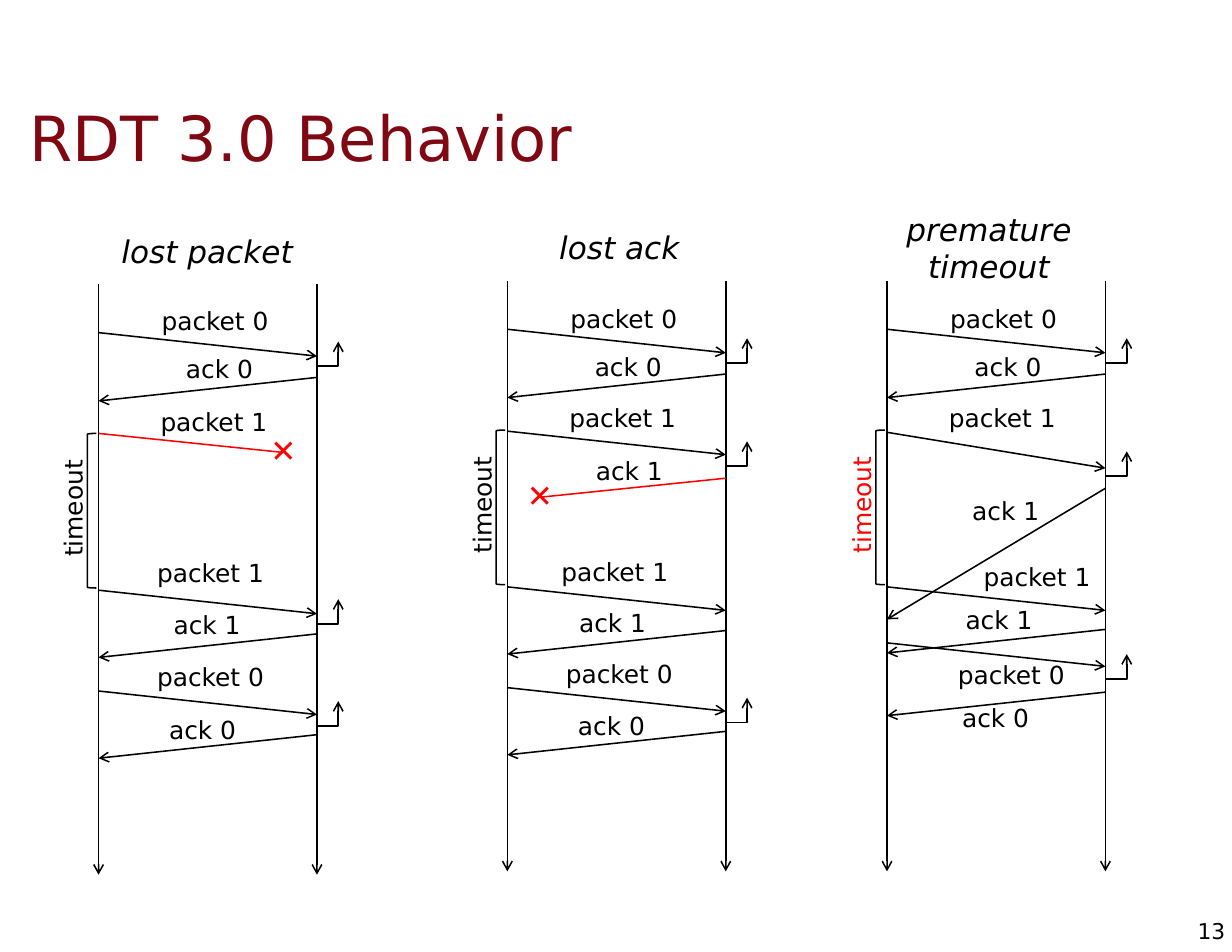
from dataclasses import dataclass

from lxml import etree
from pptx import Presentation
from pptx.dml.color import RGBColor
from pptx.enum.shapes import MSO_CONNECTOR as Connector, MSO_SHAPE as Preset
from pptx.enum.text import MSO_ANCHOR as Anchor, PP_ALIGN as Align
from pptx.oxml.ns import qn
from pptx.util import Inches, Pt

COLORS = {"title": "7F0813", "ink": "000000", "alert": "FF0000"}
LANE_WIDTH, LANE_HEIGHT = 1.95, 5.27
DROP = 0.21


@dataclass
class Message:
    """One packet or ack, with offsets in inches from the top left of its lane."""

    text: str
    y: float
    label_x: float
    label_y: float
    drop: float = DROP
    reach: float = LANE_WIDTH

    @property
    def lost(self):
        """Tell whether the message stops before the other side."""
        return self.reach < LANE_WIDTH


LANES = [
    {
        "title": "lost packet", "title_x": 0.97, "box": (0.88, 2.54),
        "timeout": "ink", "hooks": [0.73, 3.03, 3.94],
        "messages": [
            Message("packet 0", 0.43, 1.04, 0.32),
            Message("ack 0", 0.83, 1.08, 0.75),
            Message("packet 1", 1.33, 1.03, 1.22, drop=0.17, reach=1.65),
            Message("packet 1", 2.73, 1.0, 2.57),
            Message("ack 1", 3.12, 0.97, 3.04),
            Message("packet 0", 3.63, 1.0, 3.5),
            Message("ack 0", 4.02, 0.93, 3.97),
        ],
    },
    {
        "title": "lost ack", "title_x": 1.0, "box": (4.53, 2.51),
        "timeout": "ink", "hooks": [0.73, 1.65, 3.94],
        "messages": [
            Message("packet 0", 0.43, 1.04, 0.33),
            Message("ack 0", 0.83, 1.08, 0.76),
            Message("packet 1", 1.34, 1.03, 1.22),
            Message("ack 1", 1.76, 1.09, 1.69, drop=0.17, reach=1.66),
            Message("packet 1", 2.73, 0.96, 2.59),
            Message("ack 1", 3.12, 0.94, 3.05),
            Message("packet 0", 3.63, 1.0, 3.5),
            Message("ack 0", 4.02, 0.93, 3.97),
        ],
    },
    {
        "title": "premature\ntimeout", "title_x": 0.91, "box": (7.92, 2.51),
        "timeout": "alert", "hooks": [0.73, 1.74, 3.55],
        "messages": [
            Message("packet 0", 0.43, 1.04, 0.33),
            Message("ack 0", 0.83, 1.08, 0.76),
            Message("packet 1", 1.35, 1.03, 1.22, drop=0.32),
            Message("ack 1", 1.85, 1.06, 2.05, drop=1.17),
            Message("packet 1", 2.73, 1.34, 2.64),
            Message("ack 1", 3.11, 1.0, 3.02),
            Message("packet 0", 3.23, 1.11, 3.51),
            Message("ack 0", 3.67, 0.97, 3.9),
        ],
    },
]


def add_text(shapes, text, box, size=16, color="ink", font="DejaVu Sans",
             align=Align.CENTER, italic=False, rotation=0, insets=(0, 0)):
    """Place a formatted text box whose box is left, top, width, height."""
    shape = shapes.add_textbox(*map(Inches, box))
    shape.rotation = rotation
    frame = shape.text_frame
    frame.word_wrap = True
    frame.vertical_anchor = Anchor.MIDDLE
    frame.margin_left = frame.margin_right = Inches(insets[0])
    frame.margin_top = frame.margin_bottom = Inches(insets[1])
    paragraph = frame.paragraphs[0]
    paragraph.text = text
    paragraph.alignment = align
    for run in paragraph.runs:
        run.font.name = font
        run.font.size = Pt(size)
        run.font.italic = italic
        run.font.color.rgb = RGBColor.from_string(COLORS[color])


def add_label(shapes, text, center_x, center_y, width, height=0.27, **style):
    """Place a text box around a center point."""
    box = (center_x - width / 2, center_y - height / 2, width, height)
    add_text(shapes, text, box, **style)


def style_line(line, color="ink", arrow=False):
    """Give a line its color, its width and, if asked, an open arrowhead."""
    line.color.rgb = RGBColor.from_string(COLORS[color])
    line.width = Pt(1)
    if arrow:
        etree.SubElement(line._get_or_add_ln(), qn("a:tailEnd"), type="arrow")


def add_line(shapes, start, end, color="ink", arrow=True):
    """Draw a straight line between two points."""
    connector = shapes.add_connector(Connector.STRAIGHT, *map(Inches, start + end))
    style_line(connector.line, color, arrow)
    etree.SubElement(connector._element.spPr, qn("a:effectLst"))


def add_hook(shapes, x, y):
    """Draw the bent arrow that delivers data upward at the receiver."""
    points = [(x, y), (x + 0.19, y), (x + 0.19, y - 0.22)]
    start, *rest = [(Inches(px), Inches(py)) for px, py in points]
    builder = shapes.build_freeform(*start)
    builder.add_line_segments(rest, close=False)
    shape = builder.convert_to_shape()
    shape.shadow.inherit = False
    shape.fill.background()
    style_line(shape.line, arrow=True)


def add_message(shapes, message, left, top):
    """Draw a message, its label and, when it is lost, a cross at its end."""
    is_packet = message.text.startswith("packet")
    start_x = left if is_packet else left + LANE_WIDTH
    end_x = start_x + (message.reach if is_packet else -message.reach)
    start_y = top + message.y
    end_y = start_y + message.drop
    add_line(shapes, (start_x, start_y), (end_x, end_y),
             color="alert" if message.lost else "ink", arrow=not message.lost)
    add_label(shapes, message.text, left + message.label_x, top + message.label_y,
              width=1.04 if is_packet else 0.7)
    if message.lost:
        add_label(shapes, "✕", end_x, end_y - 0.02, 0.36, 0.34,
                  size=20, color="alert", font="Arial")


def add_timeout(shapes, left, top, color):
    """Draw the timeout bracket and its upright label."""
    box = (left - 0.1, top + 1.33, 0.08, 1.38)
    bracket = shapes.add_shape(Preset.LEFT_BRACKET, *map(Inches, box))
    bracket.shadow.inherit = False
    bracket.fill.background()
    style_line(bracket.line)
    add_label(shapes, "timeout", left - 0.23, top + 2, 0.87, color=color, rotation=270)


def add_lane(slide, lane):
    """Draw one sender and receiver exchange as a group."""
    shapes = slide.shapes.add_group_shape().shapes
    left, top = lane["box"]
    for x in (left, left + LANE_WIDTH):
        add_line(shapes, (x, top), (x, top + LANE_HEIGHT))
    for message in lane["messages"]:
        add_message(shapes, message, left, top)
    for y in lane["hooks"]:
        add_hook(shapes, left + LANE_WIDTH, top + y)
    add_timeout(shapes, left, top, lane["timeout"])
    lines = lane["title"].count("\n") + 1
    add_label(shapes, lane["title"], left + lane["title_x"], top - 0.3,
              1.68, 0.34 * lines, size=20, italic=True)


def main():
    """Build and save the slide."""
    presentation = Presentation()
    presentation.slide_width, presentation.slide_height = Inches(11), Inches(8.5)
    slide = presentation.slides.add_slide(presentation.slide_layouts[6])
    add_text(slide.shapes, "RDT 3.0 Behavior", (0.15, 0.7, 10.53, 1.04), size=40,
             color="title", align=Align.LEFT, insets=(0.11, 0.06))
    add_text(slide.shapes, "13", (10.6, 8.19, 0.34, 0.24), size=14, align=Align.RIGHT)
    for lane in LANES:
        add_lane(slide, lane)
    presentation.save("out.pptx")


if __name__ == "__main__":
    main()
